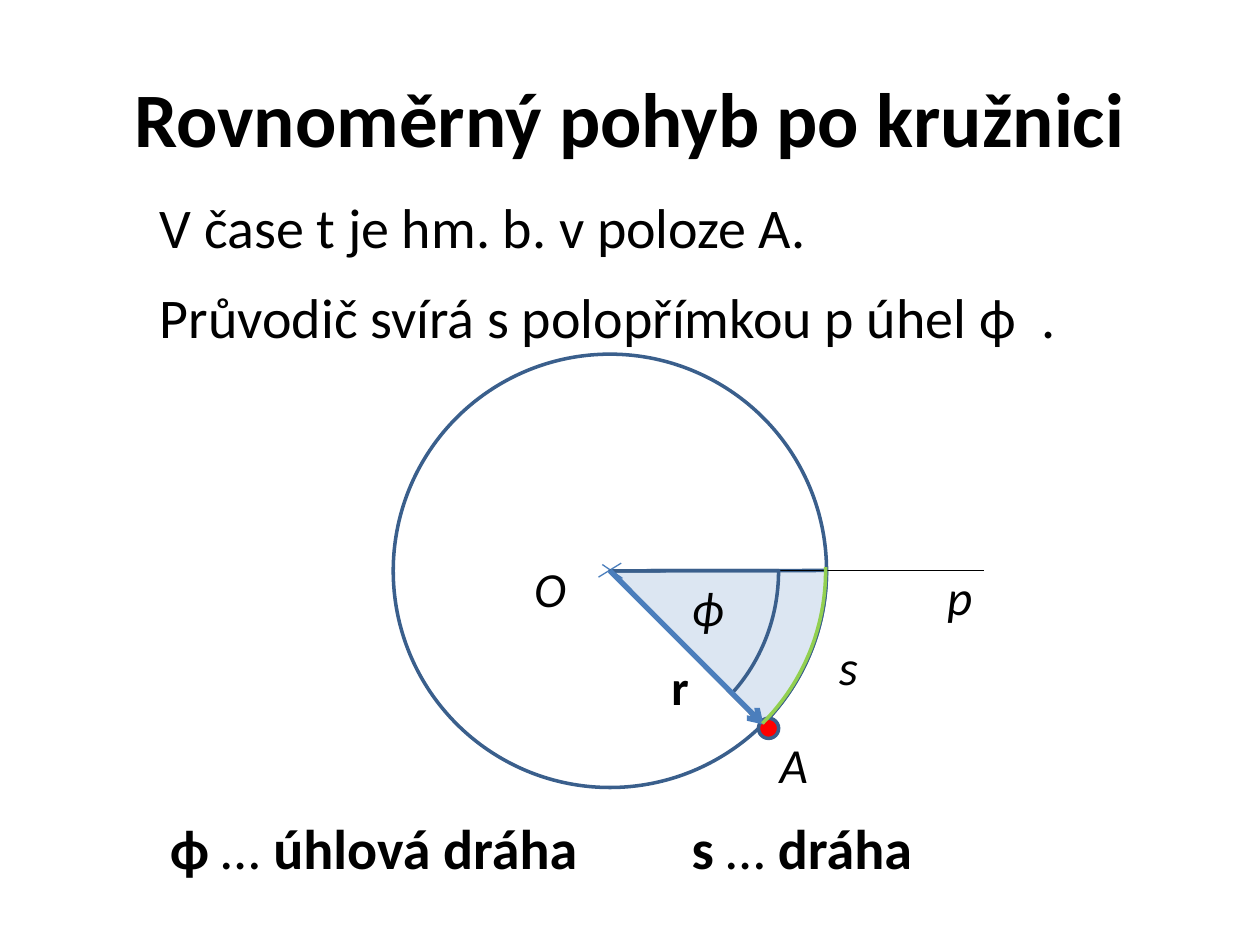
from dataclasses import dataclass
from math import cos, radians, sin

from lxml import etree
from pptx import Presentation
from pptx.dml.color import RGBColor
from pptx.enum.shapes import MSO_CONNECTOR, MSO_SHAPE
from pptx.enum.text import MSO_ANCHOR, MSO_AUTO_SIZE, PP_ALIGN
from pptx.oxml.ns import qn
from pptx.util import Pt

STRAIGHT = MSO_CONNECTOR.STRAIGHT
ELLIPSE = MSO_SHAPE.OVAL
PIE = MSO_SHAPE.PIE
DOT = MSO_SHAPE.FLOWCHART_CONNECTOR
MIDDLE = MSO_ANCHOR.MIDDLE
CENTERED = PP_ALIGN.CENTER
GROW = MSO_AUTO_SIZE.SHAPE_TO_FIT_TEXT

CENTER_X, CENTER_Y = 348.5, 326.2
RADIUS = 123.8
PIE_ANGLES = (215.945, 27.183)


@dataclass(frozen=True)
class Theme:
    font: str = "Calibri"
    title_size: float = 44
    body_size: float = 32
    symbol_size: float = 28
    text: str = "000000"
    outline: str = "3A5F8C"
    vector: str = "4B7EBC"
    sector: str = "DCE6F2"
    point: str = "FF0000"
    path_arc: str = "92D050"


class SlideBuilder:
    def __init__(self, page, theme):
        self.page = page
        self.theme = theme

    def style_span(self, span, size, bold=False, italic=False):
        span.font.name = self.theme.font
        span.font.size = Pt(size)
        span.font.bold = bold
        span.font.italic = italic
        span.font.color.rgb = RGBColor.from_string(self.theme.text)

    def text_box(self, left, top, width, height):
        box = self.page.shapes.add_textbox(Pt(left), Pt(top), Pt(width), Pt(height))
        box.text_frame.word_wrap = True
        return box.text_frame

    def title(self, text):
        frame = self.text_box(36, 21.6, 648, 90)
        frame.vertical_anchor = MIDDLE
        frame.text = text
        para = frame.paragraphs[0]
        para.alignment = CENTERED
        self.style_span(para.runs[0], self.theme.title_size, bold=True)

    def body(self, left, top, width, *parts):
        para = self.text_box(left, top, width, 54).paragraphs[0]
        para.space_before = Pt(self.theme.body_size * 0.2)
        for text, bold in parts:
            span = para.add_run()
            span.text = text
            self.style_span(span, self.theme.body_size, bold=bold)

    def symbol(self, text, left, top, bold=False):
        frame = self.text_box(left, top, 45.4, 41.2)
        frame.auto_size = GROW
        frame.text = text
        span = frame.paragraphs[0].runs[0]
        self.style_span(span, self.theme.symbol_size, bold=bold, italic=not bold)

    def paint(self, shape, line, fill=None):
        shape.shadow.inherit = False
        shape.line.color.rgb = RGBColor.from_string(line)
        shape.line.width = Pt(2)
        if fill:
            shape.fill.solid()
            shape.fill.fore_color.rgb = RGBColor.from_string(fill)
        else:
            shape.fill.background()

    def shape(self, kind, center, width, height, fill=None, angles=()):
        left, top = center[0] - width / 2, center[1] - height / 2
        shape = self.page.shapes.add_shape(kind, Pt(left), Pt(top), Pt(width), Pt(height))
        for index, angle in enumerate(angles):
            shape.adjustments[index] = angle
        self.paint(shape, self.theme.outline, fill)

    def line(self, start, end, color, width, arrow=False):
        line = self.page.shapes.add_connector(
            STRAIGHT, Pt(start[0]), Pt(start[1]), Pt(end[0]), Pt(end[1])
        )
        line.line.color.rgb = RGBColor.from_string(color)
        line.line.width = Pt(width)
        if arrow:
            outline = line.line._get_or_add_ln()
            etree.SubElement(outline, qn("a:tailEnd"), type="arrow")
        etree.SubElement(line._element.spPr, qn("a:effectLst"))

    def arc(self, radius, first, last, color):
        points = [
            (Pt(CENTER_X + radius * cos(radians(angle))),
             Pt(CENTER_Y + radius * sin(radians(angle))))
            for angle in range(first, last + 1)
        ]
        builder = self.page.shapes.build_freeform(*points[0])
        builder.add_line_segments(points[1:], close=False)
        self.paint(builder.convert_to_shape(), color)


def main():
    deck = Presentation()
    deck.slide_width, deck.slide_height = Pt(720), Pt(540)
    page = deck.slides.add_slide(deck.slide_layouts[6])
    theme = Theme()
    slide = SlideBuilder(page, theme)
    center = (CENTER_X, CENTER_Y)
    diameter = 2 * RADIUS

    slide.shape(PIE, center, diameter, diameter, theme.sector, PIE_ANGLES)
    slide.title("Rovnoměrný pohyb po kružnici")
    slide.shape(ELLIPSE, center, diameter, diameter)
    slide.shape(DOT, (439.2, 416.2), 11.5, 11.5, theme.point)
    slide.line(center, (562.3, CENTER_Y), theme.text, 0.75)
    slide.line((344.2, 322.6), (355.7, 330.5), theme.vector, 0.75)
    slide.line((355, 321.8), (342, 329.8), theme.vector, 0.75)
    slide.shape(PIE, (349.2, CENTER_Y), 191.5, 202.3, angles=PIE_ANGLES)
    slide.line(center, (436.3, 414), theme.vector, 3, arrow=True)

    slide.body(84.2, 106.6, 433.4, ("V čase t je hm. b. v poloze A.", False))
    slide.body(84.2, 157.7, 590.4, ("Průvodič svírá s polopřímkou p úhel ϕ  .", False))
    for left, name, meaning in ((90, "ϕ", "úhlová dráha"), (388.1, "s", "dráha")):
        slide.body(left, 461.5, 298.1, (name, True), (" … ", False), (meaning, True))

    slide.symbol("r", 376.6, 371.5, bold=True)
    for text, left, top in (
        ("p", 534.2, 320.4),
        ("O", 298.1, 315.4),
        ("A", 438.5, 416.2),
        ("ϕ", 388.1, 326.2),
        ("s", 472.3, 360),
    ):
        slide.symbol(text, left, top)
    slide.arc(123.3, -1, 45, theme.path_arc)

    deck.save("out.pptx")


if __name__ == "__main__":
    main()
